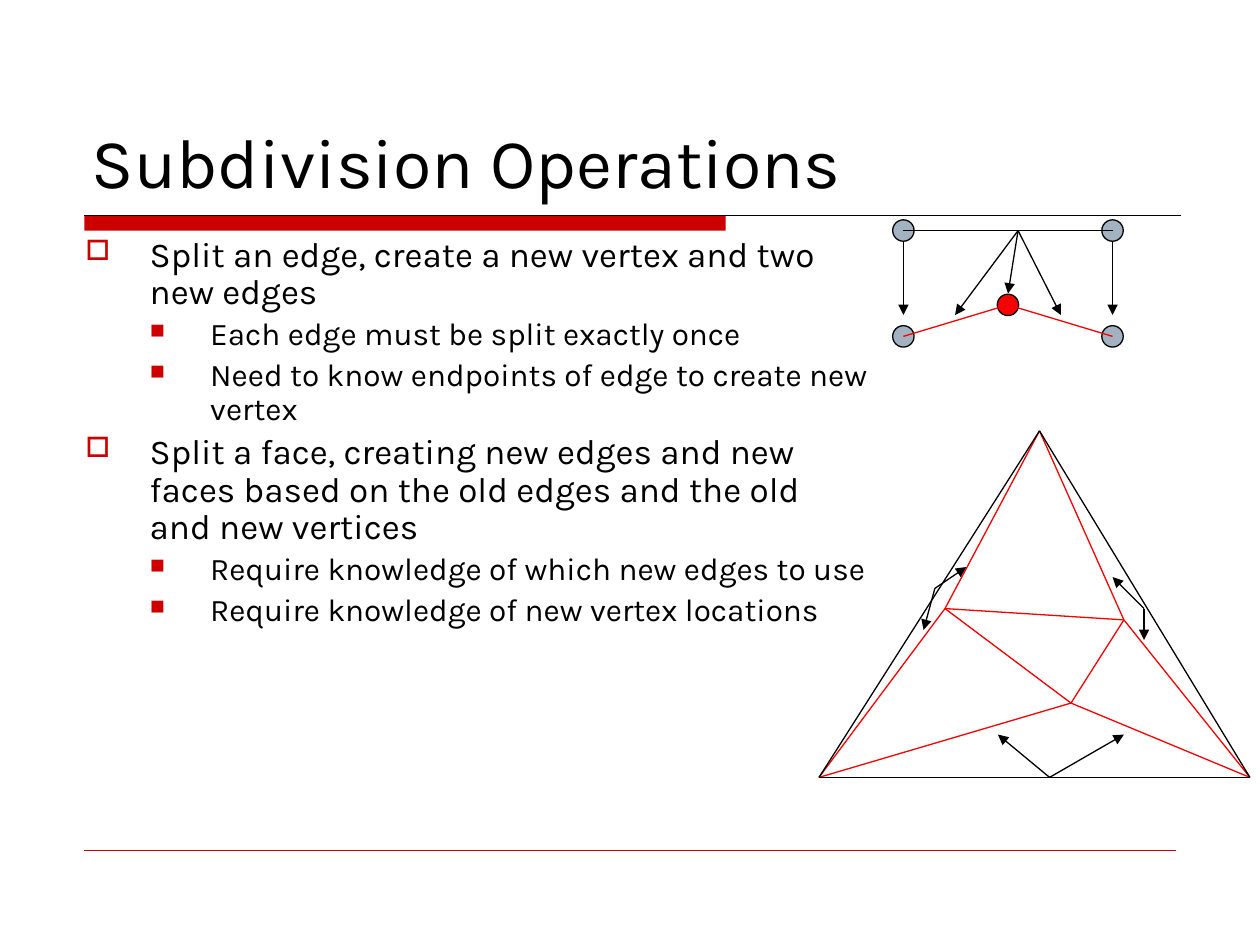
from itertools import combinations
from lxml.etree import SubElement
from pptx import Presentation
from pptx.dml.color import RGBColor
from pptx.enum.shapes import MSO_CONNECTOR as CONNECTOR, MSO_SHAPE as SHAPE
from pptx.enum.text import MSO_ANCHOR as ANCHOR
from pptx.oxml.ns import qn
from pptx.util import Inches, Pt

COLORS = {"text": "000000", "accent": "CC0000", "new": "F80000", "vertex": "A3B2C1"}
FONT = "Karla"
# size, indent, bullet, bullet size in percent, for each outline level
LEVELS = [(20, 0.51, 0.51, "□", 80), (18, 0.99, 0.48, "■", 65)]
OUTLINE = [
    (0, "Split an edge, create a new vertex and two new edges"),
    (1, "Each edge must be split exactly once"),
    (1, "Need to know endpoints of edge to create new vertex"),
    (0, "Split a face, creating new edges and new faces based on the old edges "
        "and the old and new vertices"),
    (1, "Require knowledge of which new edges to use"),
    (1, "Require knowledge of new vertex locations"),
]


def color(name):
    return RGBColor.from_string(COLORS[name])


def add_line(slide, box, start, end, name="text", width=0.75, arrow=False):
    """Draw a line between two points given relative to the box."""
    left, top = box[:2]
    line = slide.shapes.add_connector(
        CONNECTOR.STRAIGHT, Inches(left + start[0]), Inches(top + start[1]),
        Inches(left + end[0]), Inches(top + end[1]))
    line.line.color.rgb = color(name)
    line.line.width = Pt(width)
    properties = line._element.spPr
    if arrow:
        SubElement(properties.find(qn("a:ln")), qn("a:tailEnd"), type="triangle")
    SubElement(properties, qn("a:effectLst"))


def add_filled(slide, kind, left, top, width, height, fill):
    shape = slide.shapes.add_shape(
        kind, Inches(left), Inches(top), Inches(width), Inches(height))
    shape.shadow.inherit = False
    shape.fill.solid()
    shape.fill.fore_color.rgb = color(fill)
    return shape


def add_vertex(slide, box, center, fill="vertex"):
    size = 0.17
    vertex = add_filled(slide, SHAPE.OVAL, box[0] + center[0] - size / 2,
                        box[1] + center[1] - size / 2, size, size, fill)
    vertex.line.color.rgb = color("text")
    vertex.line.width = Pt(0.75)


def add_text_frame(slide, box):
    frame = slide.shapes.add_textbox(*map(Inches, box)).text_frame
    frame.word_wrap = True
    return frame


def add_run(paragraph, text, size):
    run = paragraph.add_run()
    run.text = text
    run.font.name = FONT
    run.font.size = Pt(size)
    run.font.color.rgb = color("text")


def add_rules(slide, box):
    """Place the bar and line under the title and the line at the foot."""
    left, top, width, height = box
    bar = add_filled(slide, SHAPE.RECTANGLE, left, top, 5.09, 0.12, "accent")
    bar.line.fill.background()
    add_line(slide, box, (0, 0), (width, 0))
    add_line(slide, box, (0, height), (8.66, height), "accent", 0.25)


def add_title(slide, box):
    frame = add_text_frame(slide, box)
    frame.vertical_anchor = ANCHOR.BOTTOM
    add_run(frame.paragraphs[0], "Subdivision Operations", 40)


def set_bullet(paragraph, indent, hanging, bullet, percent):
    properties = paragraph._p.get_or_add_pPr()
    properties.set("marL", str(Inches(indent)))
    properties.set("indent", str(-Inches(hanging)))
    bullet_color = SubElement(properties, qn("a:buClr"))
    SubElement(bullet_color, qn("a:srgbClr"), val=COLORS["accent"])
    SubElement(properties, qn("a:buSzPct"), val=str(percent * 1000))
    SubElement(properties, qn("a:buChar"), char=bullet)


def add_outline(slide, box):
    frame = add_text_frame(slide, box)
    for index, (level, text) in enumerate(OUTLINE):
        paragraph = frame.add_paragraph() if index else frame.paragraphs[0]
        size, *bullet = LEVELS[level]
        paragraph.level = level
        paragraph.line_spacing = 0.9
        paragraph.space_before = Pt(size * 0.2)
        set_bullet(paragraph, *bullet)
        add_run(paragraph, text, size)


def add_edge_split(slide, box):
    """Show an edge whose ends move down while a new vertex splits it."""
    width, height = box[2:]
    ends, middle, new = (0, width), (0.91, 0), (0.83, 0.59)
    for x in ends:
        for y in (0, height):
            add_vertex(slide, box, (x, y))
    add_vertex(slide, box, new, "new")
    add_line(slide, box, (0, 0), (width, 0))
    for x in ends:
        add_line(slide, box, (x, height), new, "new")
        add_line(slide, box, (x, 0.09), (x, 0.67), arrow=True)
    for tip in [(0.41, 0.67), (1.25, 0.67), (0.83, 0.5)]:
        add_line(slide, box, middle, tip, arrow=True)


def add_face_split(slide, box):
    """Show a triangle split into four faces by its new vertices."""
    width, height = box[2:]
    corners = [(1.75, 0), (0, height), (width, height)]
    left, bottom, right = inner = [(1, 1.41), (2, 2.16), (2.42, 1.5)]
    outline = zip(corners, [(left, right), (left, bottom), (bottom, right)])
    for corner, neighbors in outline:
        for vertex in neighbors:
            add_line(slide, box, corner, vertex, "new")
    for start, end in combinations(inner, 2):
        add_line(slide, box, start, end, "new")
    for start, end in combinations(corners, 2):
        add_line(slide, box, start, end)
    splits = [
        ((0.92, 1.25), (1.17, 1.08), (0.83, 1.58)),
        ((2.58, 1.41), (2.33, 1.16), (2.58, 1.66)),
        ((1.83, height), (2.42, 2.41), (1.42, 2.41)),
    ]
    for start, *tips in splits:
        for tip in tips:
            add_line(slide, box, start, tip, arrow=True)


def main():
    presentation = Presentation()
    presentation.slide_width, presentation.slide_height = Inches(10), Inches(7.5)
    slide = presentation.slides.add_slide(presentation.slide_layouts[6])
    add_rules(slide, (0.67, 1.71, 8.7, 5.04))
    add_title(slide, (0.63, 0.33, 8.75, 1.33))
    add_outline(slide, (0.58, 1.83, 6.42, 4.75))
    add_edge_split(slide, (7.17, 1.83, 1.66, 0.84))
    add_face_split(slide, (6.5, 3.42, 3.42, 2.75))
    presentation.save("out.pptx")


if __name__ == "__main__":
    main()
